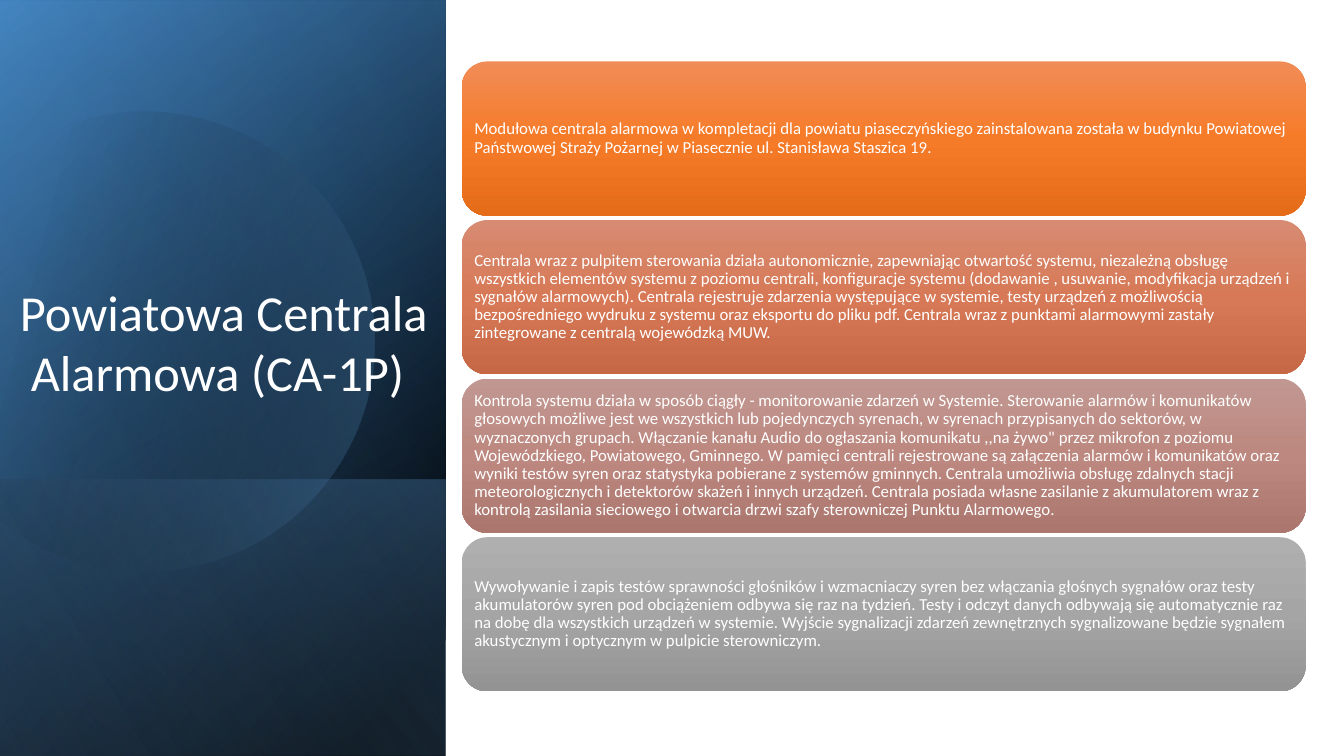
from dataclasses import dataclass
from itertools import pairwise
from math import cos, radians, sin, tan

from lxml import etree
from pptx import Presentation
from pptx.dml.color import RGBColor
from pptx.enum import shapes, text
from pptx.oxml import ns
from pptx.shapes.autoshape import Shape
from pptx.slide import Slide
from pptx.util import Inches, Pt


@dataclass(frozen=True)
class Stop:
    position: int
    color: str
    opacity: int = 100


@dataclass(frozen=True)
class Gradient:
    angle: int
    stops: tuple[Stop, ...]


@dataclass(frozen=True)
class Card:
    colors: tuple[str, str, str]
    wording: str


@dataclass(frozen=True)
class Panel:
    left: float
    top: float
    width: float
    gradient: Gradient


@dataclass(frozen=True)
class Theme:
    font: str = "Calibri"
    white: RGBColor = RGBColor(255, 255, 255)
    black: str = "000000"
    blue: str = "5B9BD5"
    deep_blue: str = "2E75B6"
    pale_blue: str = "9DC3E6"
    title_size: Pt = Pt(36)
    title_end_size: Pt = Pt(40)
    card_size: Pt = Pt(12)
    line_spacing: float = 0.9


THEME = Theme()
PANEL_HEIGHT = 4.42
PANELS = (
    Panel(-1.54, 1.54, 7.5, Gradient(50, (Stop(8, THEME.black), Stop(100, THEME.deep_blue)))),
    Panel(-1.54, 1.55, 7.5, Gradient(30, (Stop(0, THEME.black, 0), Stop(99, THEME.blue, 46)))),
    Panel(0.84, 3.92, 2.74, Gradient(130, (Stop(2, THEME.blue, 29), Stop(100, THEME.black, 30)))),
)
SHEEN = Panel(-1.54, 1.54, 7.5, Gradient(120, (Stop(0, THEME.black, 0), Stop(99, THEME.pale_blue, 11))))

DISC = Gradient(30, (Stop(29, THEME.black, 0), Stop(100, THEME.blue, 43)))
DISC_ANGLES = (242, 270, 360, 450, 510)
UNITS_PER_INCH = 1000

CARD_FIRST_TOP, CARD_LAST_TOP = 0.61, 5.33
CARDS = (
    Card(
        ("F18C57", "F67B28", "E56C19"),
        "Modułowa centrala alarmowa w kompletacji dla powiatu piaseczyńskiego zainstalowana "
        "została w budynku Powiatowej Państwowej Straży Pożarnej w Piasecznie "
        "ul. Stanisława Staszica 19.",
    ),
    Card(
        ("D78B72", "D77956", "C66846"),
        "Centrala wraz z pulpitem sterowania działa autonomicznie, zapewniając otwartość "
        "systemu, niezależną obsługę wszystkich elementów systemu z poziomu centrali, "
        "konfiguracje systemu (dodawanie , usuwanie, modyfikacja urządzeń i sygnałów "
        "alarmowych). Centrala rejestruje zdarzenia występujące w systemie, testy urządzeń "
        "z możliwością bezpośredniego wydruku z systemu oraz eksportu do pliku pdf. Centrala "
        "wraz z punktami alarmowymi zastały zintegrowane z centralą wojewódzką MUW.",
    ),
    Card(
        ("C19791", "BC8880", "AA766E"),
        "Kontrola systemu działa w sposób ciągły - monitorowanie zdarzeń w Systemie. "
        "Sterowanie alarmów i komunikatów głosowych możliwe jest we wszystkich lub "
        "pojedynczych syrenach, w syrenach przypisanych do sektorów, w wyznaczonych grupach. "
        'Włączanie kanału Audio do ogłaszania komunikatu ,,na żywo" przez mikrofon z poziomu '
        "Wojewódzkiego, Powiatowego, Gminnego. W pamięci centrali rejestrowane są załączenia "
        "alarmów i komunikatów oraz wyniki testów syren oraz statystyka pobierane z systemów "
        "gminnych. Centrala umożliwia obsługę zdalnych stacji meteorologicznych i detektorów "
        "skażeń i innych urządzeń. Centrala posiada własne zasilanie z akumulatorem wraz z "
        "kontrolą zasilania sieciowego i otwarcia drzwi szafy sterowniczej Punktu Alarmowego.",
    ),
    Card(
        ("AFAFAF", "A5A5A5", "939393"),
        "Wywoływanie i zapis testów sprawności głośników i wzmacniaczy syren bez włączania "
        "głośnych sygnałów oraz testy akumulatorów syren pod obciążeniem odbywa się raz na "
        "tydzień. Testy i odczyt danych odbywają się automatycznie raz na dobę dla wszystkich "
        "urządzeń w systemie. Wyjście sygnalizacji zdarzeń zewnętrznych sygnalizowane będzie "
        "sygnałem akustycznym i optycznym w pulpicie sterowniczym.",
    ),
)


def paint(shape: Shape, gradient: Gradient) -> None:
    shape.shadow.inherit = False
    shape.line.fill.background()
    shape.fill.background()
    properties = shape.element.spPr
    fill = etree.Element(ns.qn("a:gradFill"), rotWithShape="1")
    stop_list = etree.SubElement(fill, ns.qn("a:gsLst"))
    for stop in gradient.stops:
        entry = etree.SubElement(stop_list, ns.qn("a:gs"), pos=str(stop.position * 1000))
        color = etree.SubElement(entry, ns.qn("a:srgbClr"), val=stop.color)
        if stop.opacity < 100:
            etree.SubElement(color, ns.qn("a:alpha"), val=str(stop.opacity * 1000))
    etree.SubElement(fill, ns.qn("a:lin"), ang=str(gradient.angle * 60000), scaled="0")
    properties.replace(properties.find(ns.qn("a:noFill")), fill)


def add_panel(page: Slide, panel: Panel) -> None:
    shape = page.shapes.add_shape(
        shapes.MSO_SHAPE.RECTANGLE,
        Inches(panel.left), Inches(panel.top), Inches(panel.width), Inches(PANEL_HEIGHT),
    )
    shape.rotation = 90
    shape.element.spPr.xfrm.set("flipH", "1")
    paint(shape, panel.gradient)


def add_disc(page: Slide) -> None:
    center_x, center_y, radius = (round(inches * UNITS_PER_INCH) for inches in (1.43, 3.35, 2.28))

    def point_at(angle: float, pull: float = 0) -> tuple[int, int]:
        across, down = cos(radians(angle)), sin(radians(angle))
        return (
            round(center_x + radius * (across - pull * down)),
            round(center_y + radius * (down + pull * across)),
        )

    anchors = [point_at(angle) for angle in DISC_ANGLES]
    left, top = (min(values) for values in zip(*anchors))
    builder = page.shapes.build_freeform(*anchors[0], scale=Inches(1) / UNITS_PER_INCH)
    builder.add_line_segments(anchors[1:], close=True)
    disc = builder.convert_to_shape()
    segments = list(disc.element.spPr.iter(ns.qn("a:lnTo")))
    for segment, (start, end) in zip(segments, pairwise(DISC_ANGLES)):
        pull = 4 / 3 * tan(radians(end - start) / 4)
        curve = etree.Element(ns.qn("a:cubicBezTo"))
        for x, y in (point_at(start, pull), point_at(end, -pull), point_at(end)):
            etree.SubElement(curve, ns.qn("a:pt"), x=str(x - left), y=str(y - top))
        segment.getparent().replace(segment, curve)
    disc.rotation = 343.9
    paint(disc, DISC)


def add_title(page: Slide) -> None:
    box = page.shapes.add_textbox(Inches(0.03), Inches(1.46), Inches(4.38), Inches(2.59))
    frame = box.text_frame
    frame.word_wrap = True
    frame.vertical_anchor = text.MSO_ANCHOR.BOTTOM
    para = frame.paragraphs[0]
    para.alignment = text.PP_ALIGN.CENTER
    para.line_spacing = THEME.line_spacing
    para.font.name = THEME.font
    para.font.color.rgb = THEME.white
    for wording, size in (
        ("Powiatowa Centrala Alarmowa (CA-1P)", THEME.title_size),
        (" ", THEME.title_end_size),
    ):
        span = para.add_run()
        span.text = wording
        span.font.size = size


def add_card(page: Slide, card: Card, top: float) -> None:
    box = page.shapes.add_shape(
        shapes.MSO_SHAPE.ROUNDED_RECTANGLE,
        Inches(4.58), Inches(top), Inches(8.37), Inches(1.53),
    )
    stops = tuple(Stop(index * 50, color) for index, color in enumerate(card.colors))
    paint(box, Gradient(90, stops))
    frame = box.text_frame
    frame.word_wrap = True
    frame.vertical_anchor = text.MSO_ANCHOR.MIDDLE
    frame.margin_left = frame.margin_right = Inches(0.05)
    frame.margin_top = frame.margin_bottom = Inches(0.05)
    para = frame.paragraphs[0]
    para.text = card.wording
    para.alignment = text.PP_ALIGN.LEFT
    para.line_spacing = THEME.line_spacing
    para.font.name = THEME.font
    para.font.size = THEME.card_size
    para.font.color.rgb = THEME.white


def main() -> None:
    deck = Presentation()
    deck.slide_width, deck.slide_height = Inches(13.33), Inches(7.5)
    page = deck.slides.add_slide(deck.slide_layouts[6])
    for panel in PANELS:
        add_panel(page, panel)
    add_disc(page)
    add_panel(page, SHEEN)
    add_title(page)
    step = (CARD_LAST_TOP - CARD_FIRST_TOP) / (len(CARDS) - 1)
    for index, card in enumerate(CARDS):
        add_card(page, card, CARD_FIRST_TOP + index * step)
    deck.save("out.pptx")


if __name__ == "__main__":
    main()
